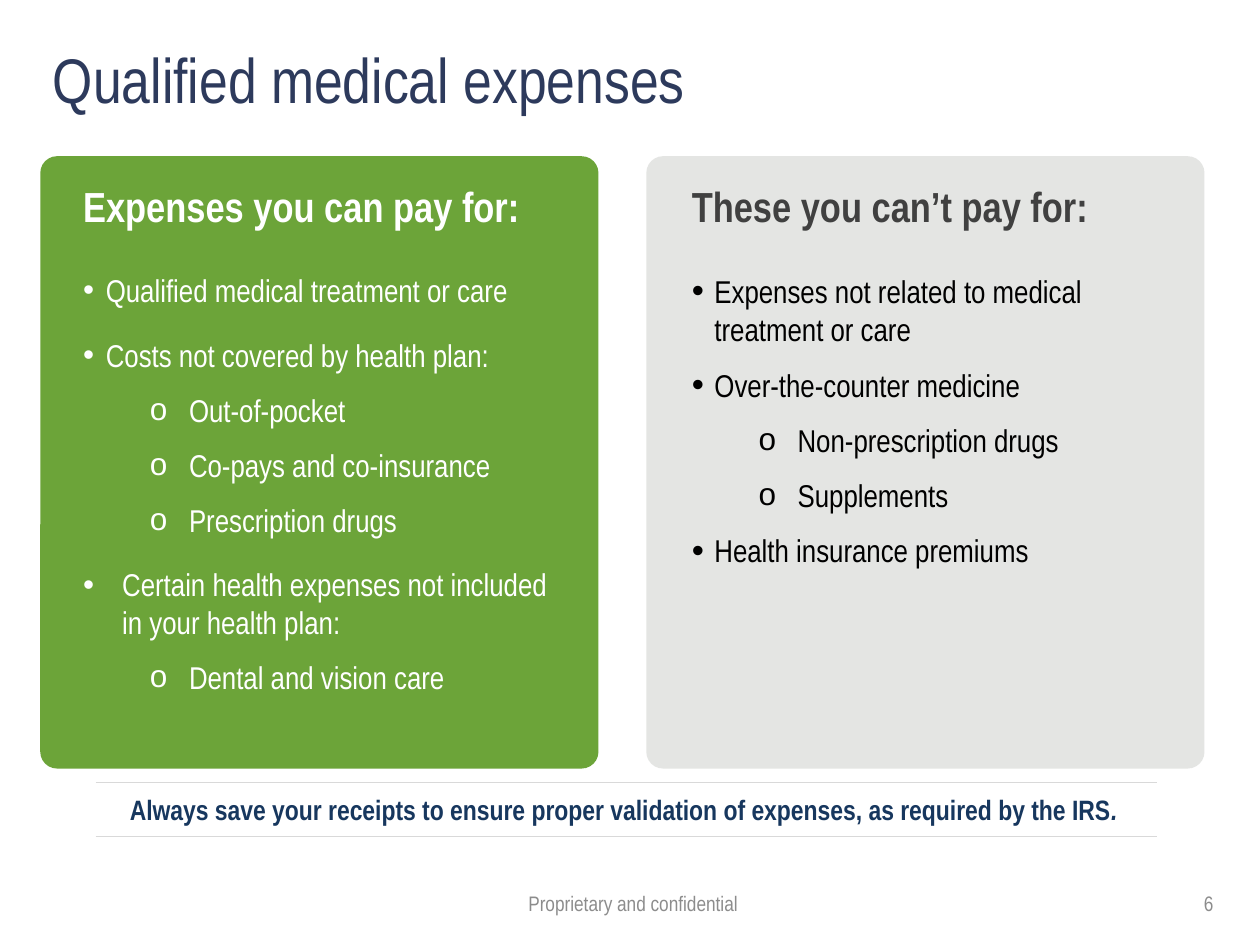
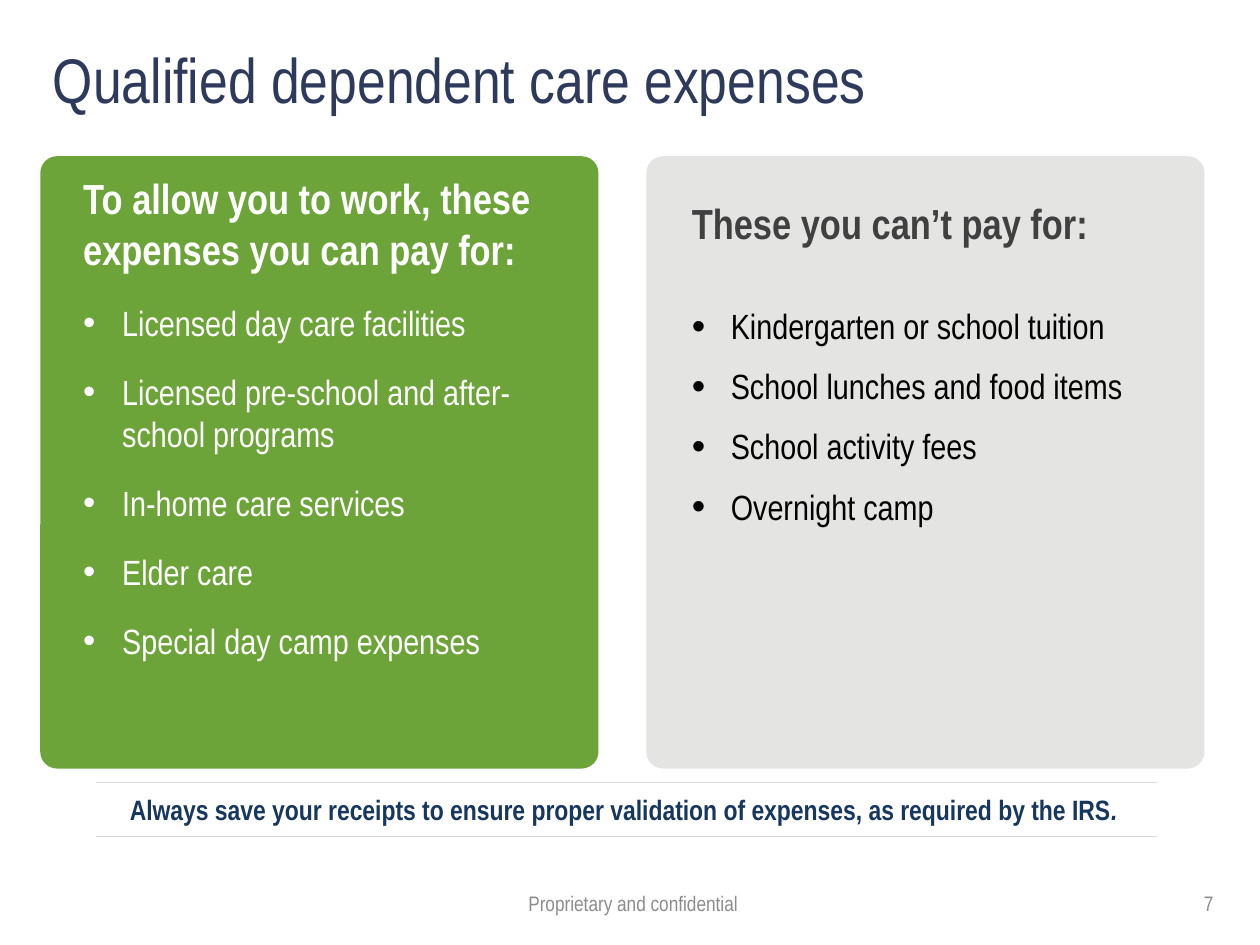
from lxml import etree
from pptx import Presentation
from pptx import util as u
from pptx.dml.color import RGBColor
from pptx.enum import shapes, text
from pptx.oxml.ns import qn

FONT = "Arial Narrow"
COLORS = {
    "title": "2D3A5C", "green": "6CA439", "grey": "E4E5E3", "white": "FFFFFF",
    "charcoal": "404040", "black": "000000", "navy": "17375E",
    "rule": "D9D9D9", "footer": "8C8C8C",
}
PANEL_TOP, PANEL_WIDTH, PANEL_HEIGHT = 1.24, 4.43, 4.86

# Each column: fill, panel left, text left, heading colour, list colour,
# space before a bullet (pt), bullet size (%)
COLUMNS = [
    ("green", 0.32, 0.56, "white", "white", 15.4, 100),
    ("grey", 5.13, 5.39, "charcoal", "black", 10.3, 110),
]

# List items: (level, text indent in inches, wording)
SLIDES = [
    {
        "number": 6, "title": "Qualified medical expenses", "size": 18,
        "columns": [
            {"heading": "Expenses you can pay for:",
             "heading_box": (1.38, 4.04), "list_box": (2.1, 4.04, 3.81),
             "items": [
                 (0, 0.18, "Qualified medical treatment or care"),
                 (0, 0.18, "Costs not covered by health plan:"),
                 (1, 0.84, "Out-of-pocket"),
                 (1, 0.84, "Co-pays and co-insurance"),
                 (1, 0.84, "Prescription drugs"),
                 (0, 0.31, "Certain health expenses not included in your health plan:"),
                 (1, 0.84, "Dental and vision care")]},
            {"heading": "These you can’t pay for:",
             "heading_box": (1.38, 3.87), "list_box": (2.11, 3.79, 3.8),
             "items": [
                 (0, 0.18, "Expenses not related to medical treatment or care"),
                 (0, 0.18, "Over-the-counter medicine"),
                 (1, 0.84, "Non-prescription drugs"),
                 (1, 0.84, "Supplements"),
                 (0, 0.18, "Health insurance premiums")]},
        ],
    },
    {
        "number": 7, "title": "Qualified dependent care expenses", "size": 20,
        "columns": [
            {"heading": "To allow you to work, these expenses you can pay for:",
             "heading_box": (1.32, 3.91), "list_box": (2.34, 3.8, 3.16),
             "items": [
                 (0, 0.31, "Licensed day care facilities"),
                 (0, 0.31, "Licensed pre-school and after-school programs"),
                 (0, 0.31, "In-home care services"),
                 (0, 0.31, "Elder care"),
                 (0, 0.31, "Special day camp expenses")]},
            {"heading": "These you can’t pay for:",
             "heading_box": (1.52, 3.87), "list_box": (2.37, 3.79, 2.27),
             "items": [
                 (0, 0.31, "Kindergarten or school tuition"),
                 (0, 0.31, "School lunches and food items"),
                 (0, 0.31, "School activity fees"),
                 (0, 0.31, "Overnight camp")]},
        ],
    },
]


def place(box, left, top, width, height, anchor=text.MSO_ANCHOR.TOP):
    """Position a text-bearing shape and return its first paragraph."""
    box.left, box.top = u.Inches(left), u.Inches(top)
    box.width, box.height = u.Inches(width), u.Inches(height)
    frame = box.text_frame
    frame.word_wrap = True
    frame.auto_size = text.MSO_AUTO_SIZE.NONE
    frame.vertical_anchor = anchor
    para = frame.paragraphs[0]
    para.space_before = u.Pt(0)
    return para


def add_span(para, wording, size, color, bold=False, italic=False):
    span = para.add_run()
    span.text = wording
    span.font.name = FONT
    span.font.size = u.Pt(size)
    span.font.bold = bold
    span.font.italic = italic
    span.font.color.rgb = RGBColor.from_string(COLORS[color])


deck = Presentation()
deck.slide_width, deck.slide_height = u.Inches(10), u.Inches(7.5)
comparison = deck.slide_layouts.get_by_name("Comparison")

for content in SLIDES:
    page = deck.slides.add_slide(comparison)
    title, *column_boxes = page.placeholders
    para = place(title, 0.32, 0.27, 9.23, 0.67)
    para.alignment = text.PP_ALIGN.LEFT
    add_span(para, content["title"], 36, "title")

    for index, (style, column) in enumerate(zip(COLUMNS, content["columns"])):
        fill, panel_left, text_left, heading_color, list_color, gap, bullet_size = style
        heading, listing = column_boxes[2 * index:2 * index + 2]

        panel = page.shapes.add_shape(
            shapes.MSO_SHAPE.ROUNDED_RECTANGLE, u.Inches(panel_left), u.Inches(PANEL_TOP),
            u.Inches(PANEL_WIDTH), u.Inches(PANEL_HEIGHT))
        panel.adjustments[0] = 0.03
        panel.shadow.inherit = False
        panel.fill.solid()
        panel.fill.fore_color.rgb = RGBColor.from_string(COLORS[fill])
        panel.line.fill.background()
        title._element.addprevious(panel._element)  # behind the text

        top, width = column["heading_box"]
        para = place(heading, text_left, top, width, 0.52)
        add_span(para, column["heading"], 24, heading_color, bold=True)

        top, width, height = column["list_box"]
        para = place(listing, text_left, top, width, height)
        for row, (level, indent, wording) in enumerate(column["items"]):
            if row:
                para = listing.text_frame.add_paragraph()
                para.space_before = u.Pt(9.8 if level else gap)
            para.level = level
            hanging = min(indent, 0.31)
            properties = para._p.get_or_add_pPr()
            properties.set("marL", str(u.Inches(indent)))
            properties.set("indent", str(-u.Inches(hanging)))
            percent = 100 if level else bullet_size
            etree.SubElement(properties, qn("a:buSzPct"), val=str(percent * 1000))
            etree.SubElement(properties, qn("a:buFont"), typeface="Arial")
            etree.SubElement(properties, qn("a:buChar"), char="o" if level else "•")
            add_span(para, wording, content["size"], list_color)

    reminder = page.shapes.add_textbox(0, 0, 0, 0)
    para = place(reminder, 0.72, 6.24, 8.46, 0.35)
    para.alignment = text.PP_ALIGN.CENTER
    add_span(para, "Always save your receipts to ensure proper validation of expenses, "
             "as required by the IRS", 16, "navy", bold=True)
    add_span(para, ".", 16, "navy", bold=True, italic=True)

    for height in (6.21, 6.64):
        rule = page.shapes.add_connector(
            shapes.MSO_CONNECTOR.STRAIGHT, u.Inches(0.76), u.Inches(height),
            u.Inches(9.18), u.Inches(height))
        rule.line.color.rgb = RGBColor.from_string(COLORS["rule"])
        rule.line.width = u.Pt(1)
        etree.SubElement(rule._element.spPr, qn("a:effectLst"))

    for left, width, alignment, wording in [
            (3.44, 3.17, text.PP_ALIGN.CENTER, "Proprietary and confidential"),
            (7.4, 2.33, text.PP_ALIGN.RIGHT, str(content["number"]))]:
        footer = page.shapes.add_textbox(0, 0, 0, 0)
        para = place(footer, left, 6.97, width, 0.4, text.MSO_ANCHOR.MIDDLE)
        para.alignment = alignment
        add_span(para, wording, 12, "footer")

deck.save("out.pptx")
